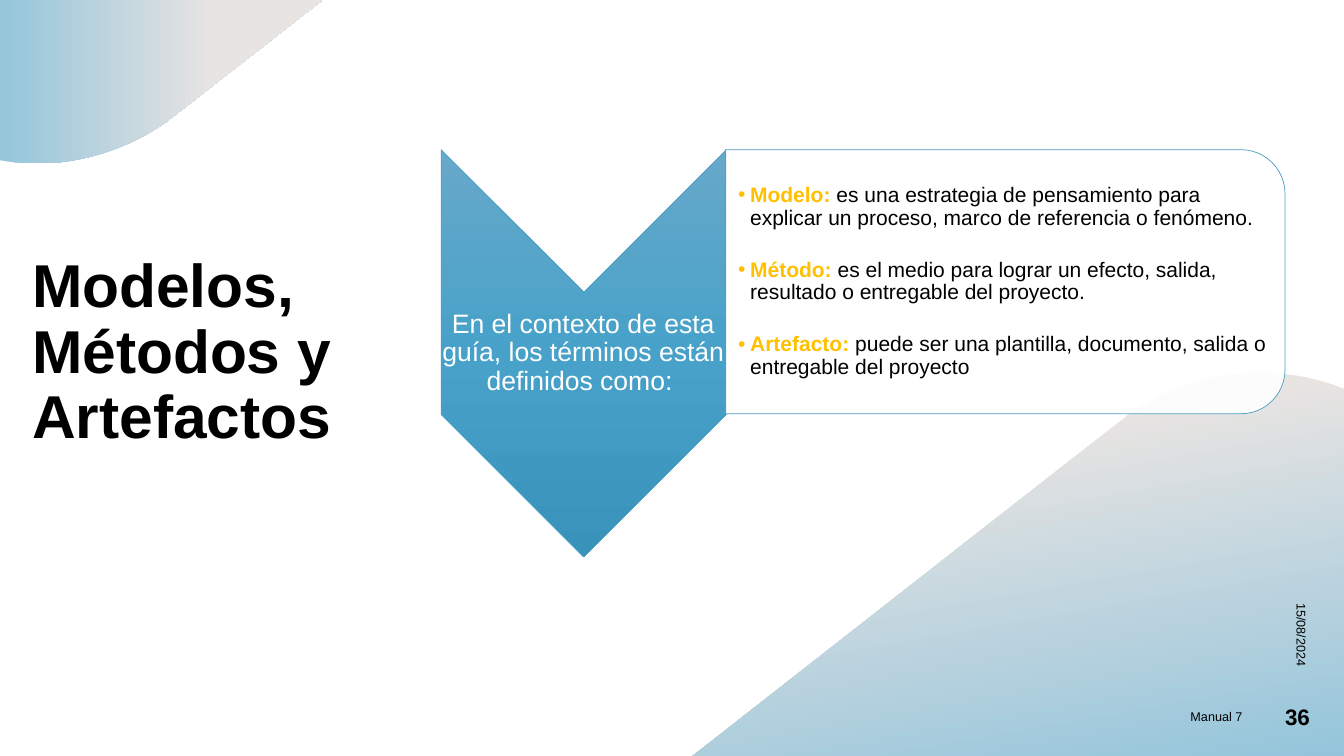
from lxml.etree import SubElement
from pptx import Presentation
from pptx.dml.color import RGBColor
from pptx.enum.shapes import MSO_SHAPE as Preset
from pptx.enum.text import MSO_ANCHOR as Anchor, PP_ALIGN as Align
from pptx.oxml.ns import qn
from pptx.util import Inches, Pt

BLACK = RGBColor(0x00, 0x00, 0x00)
WHITE = RGBColor(0xFF, 0xFF, 0xFF)
AMBER = RGBColor(0xFF, 0xC0, 0x00)
SAND = RGBColor(0xE8, 0xE4, 0xE2)
SKY = RGBColor(0x94, 0xC5, 0xDB)
OUTLINE = RGBColor(0x4D, 0x9F, 0xC3)
ARROW_BLUES = [(0, RGBColor(0x67, 0xA9, 0xCA)),
               (50, RGBColor(0x47, 0xA1, 0xC9)),
               (100, RGBColor(0x39, 0x92, 0xB9))]

# Outlines: two numbers are a line end, six are a Bezier curve
LOWER_WAVE = [(12.53, 3.7), (12.77, 3.7, 13, 3.74, 13.23, 3.82), (13.33, 3.86),
              (13.33, 7.5), (6.87, 7.5), (11.16, 4.14), (11.2, 4.1),
              (11.57, 3.85, 11.98, 3.71, 12.4, 3.7),
              (12.44, 3.7, 12.48, 3.69, 12.53, 3.7)]
UPPER_WAVE = [(0, 0), (3.2, 0), (1.7, 1.17), (1.65, 1.21),
              (1.29, 1.46, 0.88, 1.6, 0.46, 1.62),
              (0.42, 1.62, 0.37, 1.62, 0.33, 1.62),
              (0.27, 1.62, 0.21, 1.61, 0.15, 1.61), (0, 1.59)]

DEFINITIONS = [
    ("Modelo:", " es una estrategia de pensamiento para explicar un proceso, "
                "marco de referencia o fenómeno."),
    ("Método:", " es el medio para lograr un efecto, salida, resultado o "
                "entregable del proyecto."),
    ("Artefacto:", " puede ser una plantilla, documento, salida o entregable "
                   "del proyecto"),
]


def add_run(paragraph, text, size=15, color=BLACK, bold=False, font="Arial"):
    run = paragraph.add_run()
    run.text = text
    run.font.name = font
    run.font.size = Pt(size)
    run.font.bold = bold
    run.font.color.rgb = color


def flatten(outline, steps=16):
    """Turn lines and cubic curves into a list of points."""
    points = [outline[0]]
    for segment in outline[1:]:
        if len(segment) == 2:
            points.append(segment)
            continue
        controls = [points[-1], segment[:2], segment[2:4], segment[4:]]
        for step in range(1, steps + 1):
            t = step / steps
            weights = [(1 - t) ** 3, 3 * t * (1 - t) ** 2, 3 * t * t * (1 - t), t ** 3]
            points.append(tuple(sum(w * c[axis] for w, c in zip(weights, controls))
                                for axis in (0, 1)))
    return points


class SlideBuilder:
    def __init__(self, slide):
        self.slide = slide

    def gradient(self, shape, stops, angle):
        shape.fill.gradient()
        shape.fill.gradient_angle = (360 - angle) % 360
        stop_list = shape._element.spPr.find(qn("a:gradFill")).find(qn("a:gsLst"))
        for old_stop in list(stop_list):
            stop_list.remove(old_stop)
        for position, color in stops:
            stop = SubElement(stop_list, qn("a:gs"), pos=str(position * 1000))
            SubElement(stop, qn("a:srgbClr"), val=str(color))

    def wave(self, outline, stops, angle):
        points = [(Inches(x), Inches(y)) for x, y in flatten(outline)]
        builder = self.slide.shapes.build_freeform(*points[0])
        builder.add_line_segments(points[1:], close=True)
        shape = builder.convert_to_shape()
        shape.shadow.inherit = False
        shape.line.fill.background()
        self.gradient(shape, stops, angle)

    def turned_shape(self, preset, *box):
        shape = self.slide.shapes.add_shape(preset, *map(Inches, box))
        shape.rotation = 90
        shape.shadow.inherit = False
        shape.line.color.rgb = OUTLINE
        shape.line.width = Pt(0.5)
        return shape

    def text_box(self, *box, anchor=Anchor.MIDDLE, insets=(0.1, 0.05, 0.1, 0.05)):
        shape = self.slide.shapes.add_textbox(*map(Inches, box))
        frame = shape.text_frame
        frame.word_wrap = True
        frame.vertical_anchor = anchor
        (frame.margin_left, frame.margin_top,
         frame.margin_right, frame.margin_bottom) = map(Inches, insets)
        return shape

    def label(self, text, *box, align=Align.LEFT, spacing=1.0, rotation=0,
              frame_format=None, **font_format):
        shape = self.text_box(*box, **(frame_format or {}))
        shape.rotation = rotation
        paragraph = shape.text_frame.paragraphs[0]
        paragraph.alignment = align
        paragraph.line_spacing = spacing
        add_run(paragraph, text, **font_format)

    def definitions(self, items, *box):
        frame = self.text_box(*box, insets=(0.12, 0.01, 0.01, 0.01)).text_frame
        for index, (term, meaning) in enumerate(items):
            paragraph = frame.add_paragraph() if index else frame.paragraphs[0]
            properties = paragraph._p.get_or_add_pPr()
            properties.set("marL", str(Inches(0.12)))
            properties.set("indent", str(-Inches(0.12)))
            SubElement(properties, qn("a:buFont"), typeface="Arial")
            SubElement(properties, qn("a:buChar"), char="•")
            paragraph.line_spacing = 0.9
            if index:
                paragraph.space_before = Pt(21)
            add_run(paragraph, term, color=AMBER, bold=True)
            add_run(paragraph, meaning)


def main():
    presentation = Presentation()
    presentation.slide_width = Inches(13.33)
    presentation.slide_height = Inches(7.5)
    builder = SlideBuilder(presentation.slides.add_slide(presentation.slide_layouts[6]))

    # Background waves
    builder.wave(LOWER_WAVE, [(23, SAND), (100, SKY)], 80)
    builder.wave(UPPER_WAVE, [(0, SKY), (67, SAND)], 0)

    # Title
    builder.label("Modelos, Métodos y Artefactos", 0.22, 1.29, 4.44, 3.24,
                  spacing=0.9, size=43.2, bold=True,
                  frame_format={"anchor": Anchor.BOTTOM})

    # Footer
    builder.label("15/08/2024", 11.46, 5.06, 2.9, 0.4, align=Align.RIGHT,
                  rotation=90, size=9)
    builder.label("Manual 7", 9.42, 6.91, 3, 0.4, align=Align.RIGHT, size=9)
    builder.label("36", 12.42, 6.91, 0.67, 0.4, align=Align.RIGHT, size=16, bold=True)

    # Arrow with the introduction
    arrow = builder.turned_shape(Preset.CHEVRON, 3.77, 2.09, 4.04, 2.83)
    builder.gradient(arrow, ARROW_BLUES, 0)
    builder.label("En el contexto de esta guía, los términos están definidos como: ",
                  4.37, 2.9, 2.83, 1.21, align=Align.CENTER, spacing=0.9,
                  size=19, color=WHITE, frame_format={"insets": (0.01,) * 4})

    # Panel with the definitions
    panel = builder.turned_shape(Preset.ROUND_2_SAME_RECTANGLE, 8.66, 0.02, 2.62, 5.55)
    panel.fill.solid()
    panel.fill.fore_color.rgb = WHITE
    panel_color = panel._element.spPr.find(qn("a:solidFill"))[0]
    SubElement(panel_color, qn("a:alpha"), val="90000")
    builder.definitions(DEFINITIONS, 7.2, 1.61, 5.42, 2.37)

    presentation.save("out.pptx")


if __name__ == "__main__":
    main()
